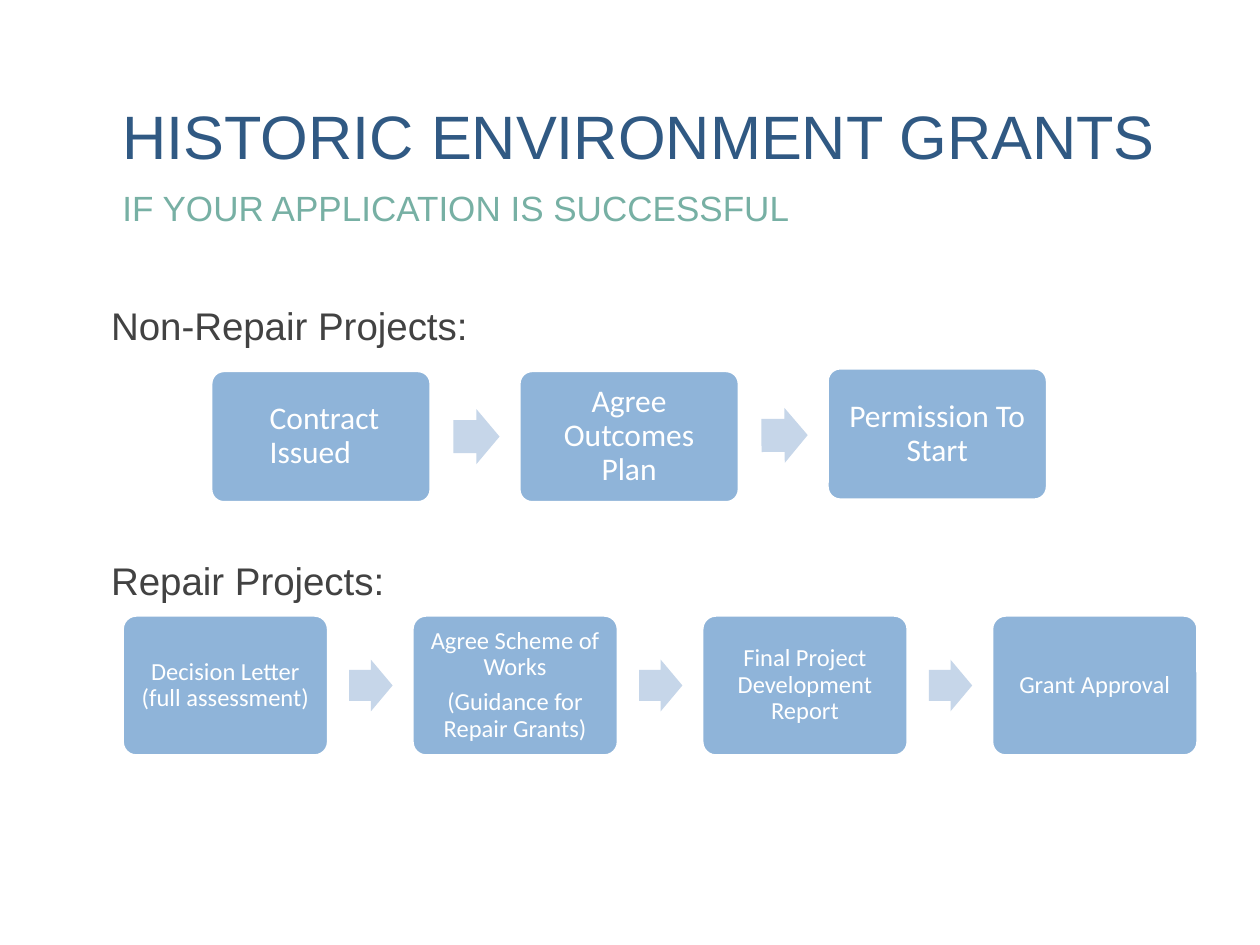
import math

from pptx import Presentation
from pptx import util as u
from pptx.dml.color import RGBColor
from pptx.enum import shapes, text

NAVY, GREEN, GREY = "305983", "77B0A4", "424242"
BOX_BLUE, ARROW_BLUE, WHITE = "8FB4D9", "C6D6E9", "FFFFFF"


def color(value):
    """Turn a hex string into a colour."""
    return RGBColor.from_string(value)


def apply_format(target, values):
    """Set each named attribute on the target."""
    for name, value in values.items():
        setattr(target, name, value)


def write_text(frame, lines, paragraph_format, font_format, hex_color, insets):
    """Fill a text frame with one paragraph for each line."""
    frame.word_wrap = True
    sides = ("margin_left", "margin_top", "margin_right", "margin_bottom")
    apply_format(frame, {side: u.Pt(inset) for side, inset in zip(sides, insets)})
    for index, line in enumerate(lines):
        paragraph = frame.add_paragraph() if index else frame.paragraphs[0]
        paragraph.text = line
        apply_format(paragraph, paragraph_format)
        apply_format(paragraph.font, font_format)
        paragraph.font.color.rgb = color(hex_color)


def add_heading(slide, line, left, top, width, size, hex_color):
    """Add a single line of Arial text."""
    box = slide.shapes.add_textbox(u.Pt(left), u.Pt(top), u.Pt(width), u.Pt(size * 1.2))
    write_text(box.text_frame, [line], {"alignment": text.PP_ALIGN.LEFT},
               {"name": "Arial", "size": u.Pt(size)}, hex_color, (0, 0, 0, 0))


def add_filled_shape(slide, kind, left, top, width, height, fill, adjustments):
    """Add a flat preset shape without an outline."""
    shape = slide.shapes.add_shape(kind, u.Pt(left), u.Pt(top), u.Pt(width), u.Pt(height))
    shape.shadow.inherit = False
    shape.fill.solid()
    shape.fill.fore_color.rgb = color(fill)
    shape.line.fill.background()
    for index, value in enumerate(adjustments):
        shape.adjustments[index] = value
    return shape


def add_step(slide, lines, left, top, width, height, size, indent):
    """Add a rounded process box; an indent makes its text left aligned."""
    box = add_filled_shape(slide, shapes.MSO_SHAPE.ROUNDED_RECTANGLE,
                           left, top, width, height, BOX_BLUE, [0.1])
    box.line.color.rgb = color(WHITE)
    box.line.width = u.Pt(2)
    alignment = text.PP_ALIGN.LEFT if indent else text.PP_ALIGN.CENTER
    paragraph_format = {"alignment": alignment, "line_spacing": 0.9,
                        "space_after": u.Pt(size * 0.35)}
    box.text_frame.vertical_anchor = text.MSO_ANCHOR.MIDDLE
    write_text(box.text_frame, lines, paragraph_format,
               {"name": "Calibri", "size": u.Pt(size)}, WHITE, (indent or 6, 6, 6, 6))


def add_process(slide, steps, left, pitch, width, height, size):
    """Add a row of steps with an arrow between each pair."""
    for index, (lines, top, indent) in enumerate(steps):
        step_left = left + index * pitch
        add_step(slide, lines, step_left, top, width, height, size, indent)
        if index + 1 < len(steps):
            rise = steps[index + 1][1] - top
            arrow_height = width * 0.25
            arrow_top = top + (height + rise - arrow_height) / 2
            arrow = add_filled_shape(slide, shapes.MSO_SHAPE.RIGHT_ARROW,
                                     step_left + width * 1.1, arrow_top, width * 0.21,
                                     arrow_height, ARROW_BLUE, [0.6, 0.5])
            arrow.rotation = math.degrees(math.atan2(rise, pitch))


def main():
    """Build and save the slide."""
    presentation = Presentation()
    presentation.slide_width, presentation.slide_height = u.Pt(720), u.Pt(540)
    slide = presentation.slides.add_slide(presentation.slide_layouts[6])

    add_heading(slide, "HISTORIC ENVIRONMENT GRANTS", 70, 56, 605, 35, NAVY)
    add_heading(slide, "IF YOUR APPLICATION IS SUCCESSFUL", 70, 106.5, 615, 20, GREEN)
    add_heading(slide, "Non-Repair Projects:", 63.5, 172.5, 620, 22, GREY)
    add_heading(slide, "Repair Projects:", 63.5, 318.5, 620, 22, GREY)

    non_repair_steps = [
        (["Contract Issued"], 211.7, 31.5),
        (["Agree Outcomes Plan"], 211.7, 0),
        (["Permission To Start"], 210.2, 0),
    ]
    repair_steps = [(lines, 351.4, 0) for lines in (
        ["Decision Letter (full assessment)"],
        ["Agree Scheme of Works", "(Guidance for Repair Grants)"],
        ["Final Project Development Report"],
        ["Grant Approval"],
    )]
    add_process(slide, non_repair_steps, 120.4, 176.1, 126, 75.6, 18)
    add_process(slide, repair_steps, 69.8, 165.6, 118, 80.6, 14)

    presentation.save("out.pptx")


if __name__ == "__main__":
    main()
